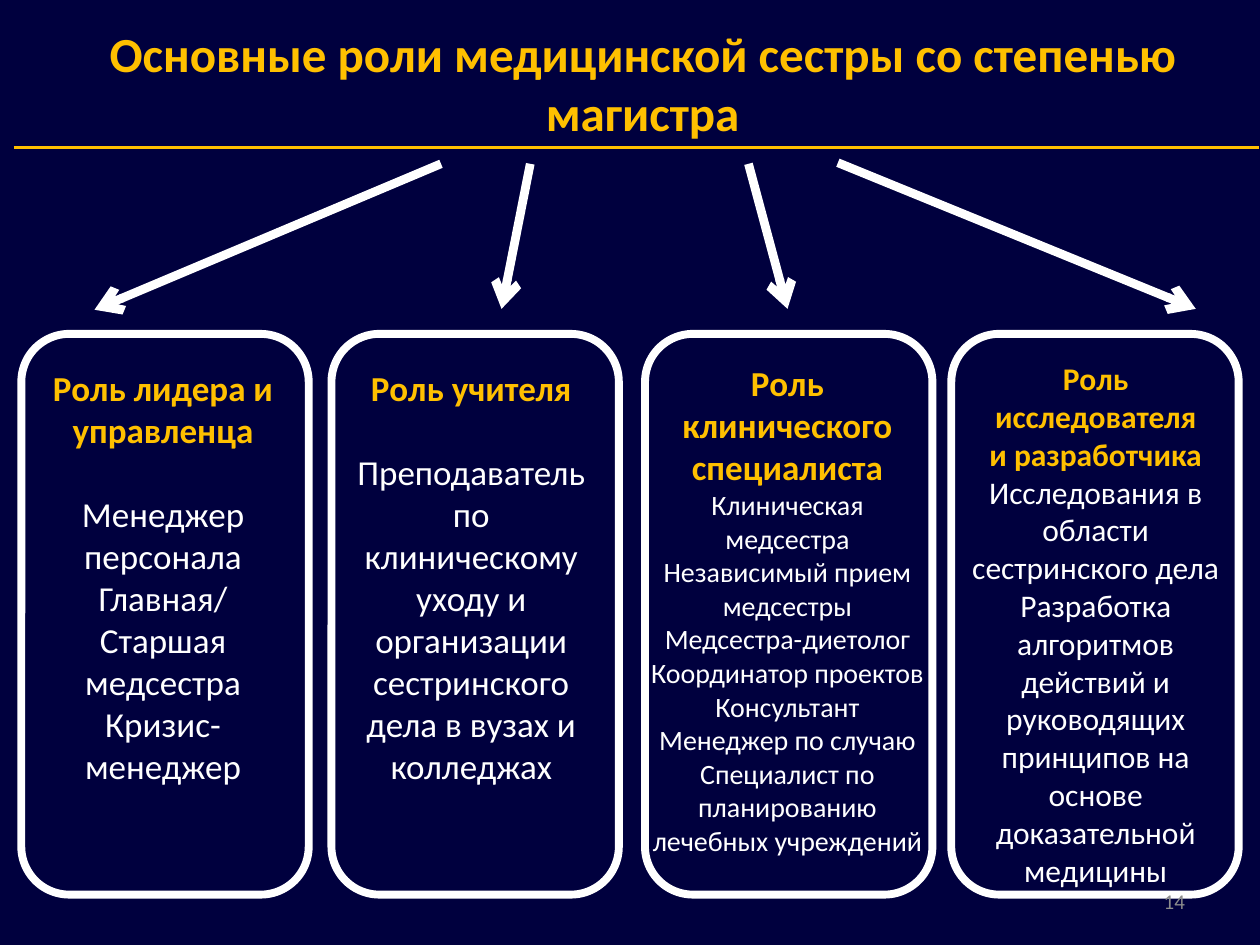
from typing import NamedTuple

from lxml.etree import SubElement
from pptx import Presentation
from pptx.dml.color import RGBColor
from pptx.enum.shapes import MSO_CONNECTOR, MSO_SHAPE
from pptx.enum.text import MSO_ANCHOR, MSO_AUTO_SIZE, PP_ALIGN
from pptx.oxml.ns import qn
from pptx.util import Pt

NAVY = RGBColor(0x00, 0x00, 0x3E)
GOLD = RGBColor(0xFF, 0xC0, 0x00)
WHITE = RGBColor(0xFF, 0xFF, 0xFF)
GREY = RGBColor(0x8C, 0x8C, 0x8C)
FONT = "Calibri"
FRAME_TOP, FRAME_WIDTH, FRAME_HEIGHT = 190.8, 164.2, 320.4


class Box(NamedTuple):
    left: float
    top: float
    width: float
    height: float


class Role(NamedTuple):
    frame_left: float
    text_box: Box
    heading: list[str]
    duties: list[str]
    heading_size: float
    duty_size: float
    gap: float = 0


class Line(NamedTuple):
    start: tuple[float, float]
    end: tuple[float, float]
    color: RGBColor = WHITE
    width: float = 5
    arrow: bool = True


ROLES = [
    Role(12.2, Box(12.2, 206, 162, 273.6),
         ["Роль лидера и управленца"],
         ["Менеджер персонала", "Главная/", "Старшая медсестра", "Кризис-менеджер"],
         20, 20, gap=24),
    Role(189.4, Box(195.8, 206, 147, 273.6),
         ["Роль учителя"],
         ["Преподаватель по клиническому уходу и организации сестринского дела "
          "в вузах и колледжах"],
         20, 20, gap=24),
    Role(368.6, Box(356.4, 203, 187.2, 317.5),
         ["Роль", "клинического специалиста"],
         ["Клиническая", "медсестра", "Независимый прием медсестры",
          "Медсестра-диетолог", "Координатор проектов", "Консультант",
          "Менеджер по случаю", "Специалист по планированию",
          "лечебных учреждений"],
         20, 16),
    Role(543.6, Box(535, 201.6, 182.2, 312.5),
         ["Роль", "исследователя", "и разработчика"],
         ["Исследования в области", "сестринского дела", "Разработка алгоритмов",
          "действий и руководящих принципов на", "основе доказательной медицины"],
         18, 18),
]

LINES = [
    Line((8, 84.2), (719.3, 84.2), GOLD, 1.5, arrow=False),
    Line((252, 93.6), (54, 177)),
    Line((303, 93.6), (286.6, 176.5)),
    Line((427.7, 93.6), (450, 176.5)),
    Line((478.8, 93), (683.3, 176.5)),
]


def place(shape, box: Box, anchor=MSO_ANCHOR.TOP) -> None:
    for name, value in box._asdict().items():
        setattr(shape, name, Pt(value))
    frame_format = {"word_wrap": True, "auto_size": MSO_AUTO_SIZE.NONE,
                    "vertical_anchor": anchor}
    for name, value in frame_format.items():
        setattr(shape.text_frame, name, value)


def write(paragraph, text: str, size: float, color: RGBColor, bold: bool = False,
          align=PP_ALIGN.CENTER, gap: float = 0) -> None:
    """Fill a paragraph without bullet or indent, gap points below the last one."""
    paragraph_format = {"alignment": align, "line_spacing": 1.0,
                        "space_before": Pt(gap), "space_after": Pt(0)}
    for name, value in paragraph_format.items():
        setattr(paragraph, name, value)
    properties = paragraph._p.get_or_add_pPr()
    properties.set("marL", "0")
    properties.set("indent", "0")
    SubElement(properties, qn("a:buNone"))
    run = paragraph.add_run()
    run.text = text
    for name, value in {"name": FONT, "size": Pt(size), "bold": bold}.items():
        setattr(run.font, name, value)
    run.font.color.rgb = color


def add_frame(slide, left: float) -> None:
    frame = slide.shapes.add_shape(
        MSO_SHAPE.ROUNDED_RECTANGLE,
        Pt(left), Pt(FRAME_TOP), Pt(FRAME_WIDTH), Pt(FRAME_HEIGHT))
    frame.shadow.inherit = False
    frame.fill.background()
    frame.line.color.rgb = WHITE
    frame.line.width = Pt(4.5)


def fill_role(placeholder, role: Role) -> None:
    place(placeholder, role.text_box)
    frame = placeholder.text_frame
    for index, text in enumerate(role.heading):
        paragraph = frame.add_paragraph() if index else frame.paragraphs[0]
        write(paragraph, text, role.heading_size, GOLD, bold=True)
    for index, text in enumerate(role.duties):
        write(frame.add_paragraph(), text, role.duty_size, WHITE,
              gap=0 if index else role.gap)


def add_line(slide, line: Line) -> None:
    connector = slide.shapes.add_connector(
        MSO_CONNECTOR.STRAIGHT, *map(Pt, line.start + line.end))
    connector.line.color.rgb = line.color
    connector.line.width = Pt(line.width)
    if line.arrow:
        SubElement(connector.line._get_or_add_ln(), qn("a:tailEnd"), type="arrow")
    SubElement(connector._element.spPr, qn("a:effectLst"))


def main() -> None:
    presentation = Presentation()
    presentation.slide_width, presentation.slide_height = Pt(720), Pt(540)
    comparison_layout = presentation.slide_layouts[4]
    slide = presentation.slides.add_slide(comparison_layout)
    slide.background.fill.solid()
    slide.background.fill.fore_color.rgb = NAVY

    title, *bodies = slide.placeholders
    place(title, Box(39.6, 10, 655.2, 75))
    write(title.text_frame.paragraphs[0],
          "Основные роли медицинской сестры со степенью магистра",
          28, GOLD, bold=True)

    for role, body in zip(ROLES, bodies):
        add_frame(slide, role.frame_left)
        fill_role(body, role)
    for line in LINES:
        add_line(slide, line)

    number_box = Box(516.2, 500.4, 168, 28.8)
    number = slide.shapes.add_textbox(*map(Pt, number_box))
    place(number, number_box, MSO_ANCHOR.MIDDLE)
    write(number.text_frame.paragraphs[0], "14", 12, GREY, align=PP_ALIGN.RIGHT)

    presentation.save("out.pptx")


if __name__ == "__main__":
    main()
